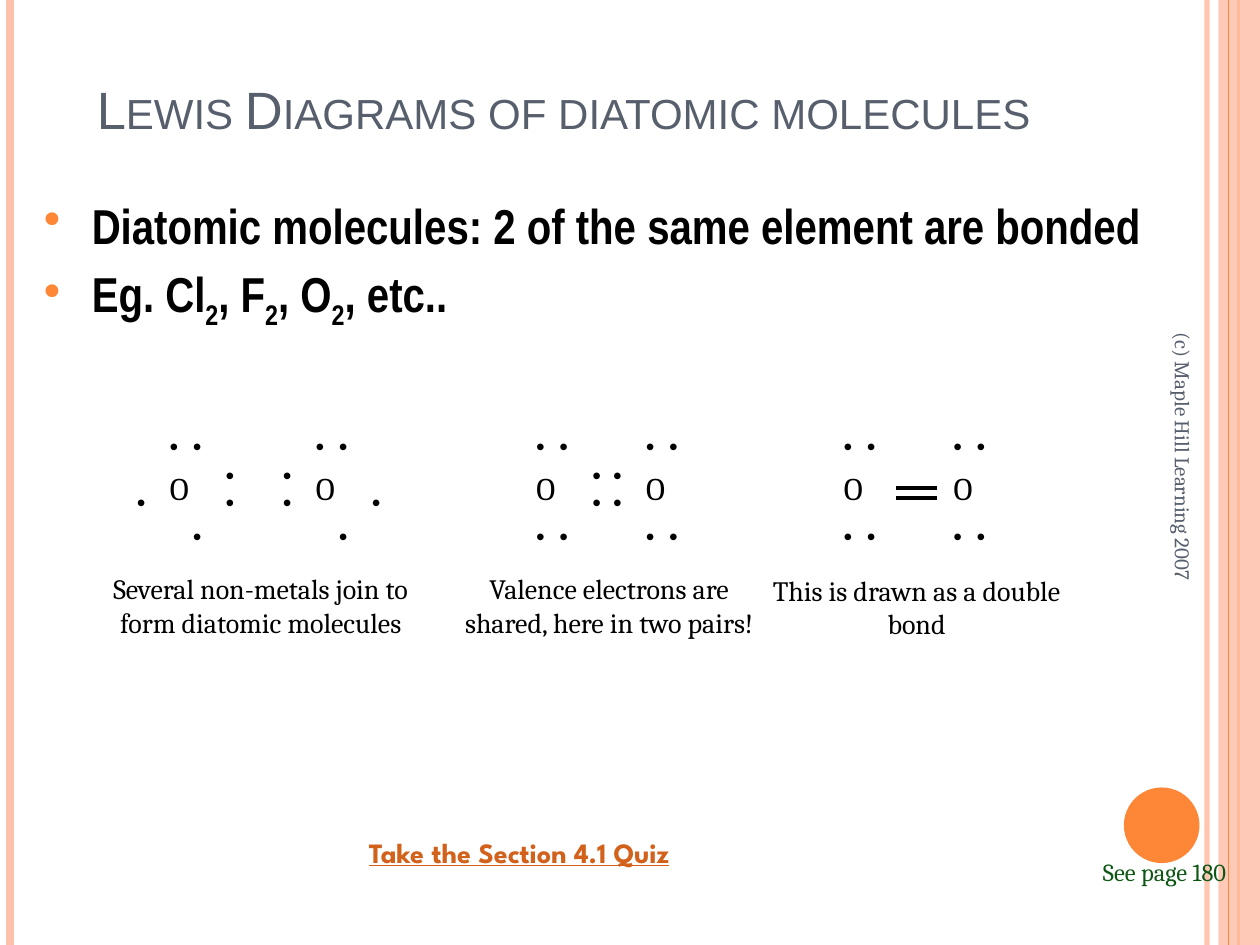
import pptx
import pptx.util
import pptx.dml.color
import pptx.enum.shapes
import pptx.enum.text
import pptx.oxml.ns
import lxml.etree

deck = pptx.Presentation()
deck.slide_width = pptx.util.Inches(10)
deck.slide_height = pptx.util.Inches(7.5)
page = deck.slides.add_slide(deck.slide_layouts[6])

# Grid of square cells: 100 columns by 75 rows
COLUMNS, ROWS = 100, 75
CELL = deck.slide_width / COLUMNS
ALIGN = pptx.enum.text.PP_ALIGN
ANCHOR = pptx.enum.text.MSO_ANCHOR
SHAPES = pptx.enum.shapes.MSO_SHAPE
ORANGE, PEACH, SLATE, BLACK = "FE8637", "FEC2AC", "575F6D", "000000"


def grid(*cells):
    return [round(cell * CELL) for cell in cells]


def color(hex_value):
    return pptx.dml.color.RGBColor.from_string(hex_value)


def child(parent, tag, **attributes):
    return lxml.etree.SubElement(parent, pptx.oxml.ns.qn(tag), attributes)


def set_alpha(fill_owner, percent):
    for fill in fill_owner.iter(pptx.oxml.ns.qn("a:srgbClr")):
        child(fill, "a:alpha", val=str(percent * 1000))


def add_line(start, end, hex_value, width, alpha=100):
    line = page.shapes.add_connector(
        pptx.enum.shapes.MSO_CONNECTOR.STRAIGHT, *grid(*start, *end))
    line.line.color.rgb = color(hex_value)
    line.line.width = pptx.util.Pt(width)
    properties = line._element.spPr
    if alpha < 100:
        set_alpha(properties, alpha)
    child(properties, "a:effectLst")


def add_solid(kind, box, hex_value):
    shape = page.shapes.add_shape(kind, *grid(*box))
    shape.shadow.inherit = False
    shape.fill.solid()
    shape.fill.fore_color.rgb = color(hex_value)
    shape.line.fill.background()
    return shape


def add_frame(box, anchor=ANCHOR.TOP):
    shape = page.shapes.add_textbox(*grid(*box))
    shape.text_frame.word_wrap = True
    shape.text_frame.vertical_anchor = anchor
    return shape


def add_span(para, text, size, font="Cambria", hex_value=BLACK, bold=False):
    span = para.add_run()
    span.text = text
    span.font.size = pptx.util.Pt(size)
    span.font.name = font
    span.font.bold = bold
    span.font.color.rgb = color(hex_value)
    return span


def add_label(box, text, size, align=ALIGN.LEFT, anchor=ANCHOR.TOP, **style):
    shape = add_frame(box, anchor)
    para = shape.text_frame.paragraphs[0]
    para.alignment = align
    return shape, add_span(para, text, size, **style)


def draw_backdrop(left, top, width, height):
    bottom = top + height
    for x, hex_value, weight, alpha in [
            (95.8, PEACH, 3, 93), (0.8, PEACH, 4.5, 100), (98.3, ORANGE, 1.5, 100)]:
        add_line((left + x, top), (left + x, bottom), hex_value, weight, alpha)
    band = add_solid(SHAPES.RECTANGLE, (left + 96.7, top, width - 96.7, height), PEACH)
    set_alpha(band._element.spPr, 87)
    add_line((left + 97.5, top), (left + 97.5, bottom), ORANGE, 0.75)
    add_solid(SHAPES.OVAL, (left + 89.2, top + 62.5, 6, 6), ORANGE)


def draw_bullets(box, items):
    """Each item alternates plain text and subscript."""
    frame = add_frame(box).text_frame
    for number, item in enumerate(items):
        para = frame.add_paragraph() if number else frame.paragraphs[0]
        para.space_before = pptx.util.Pt(5.6 if number else 0)
        properties = para._p.get_or_add_pPr()
        indent = grid(3.8)[0]
        properties.set("marL", str(indent))
        properties.set("indent", str(-indent))
        child(child(properties, "a:buClr"), "a:srgbClr", val=ORANGE)
        child(properties, "a:buChar", char="•")
        for part, text in enumerate(item):
            span = add_span(para, text, 28, "Arial Narrow", bold=True)
            if part % 2:
                span.font._element.set("baseline", "-25000")


# Electron columns inside an atom's box
FAR_LEFT, LEFT, RIGHT, FAR_RIGHT = 2, 4.6, 6.45, 9.05
PAIR = (LEFT, RIGHT)
SIDE_PITCH = 15.4  # points from one side row to the next


def draw_atom(box, rows):
    """Rows list the electron columns: top, upper side, lower side, bottom."""
    left, top, width, height = box
    frame = add_frame(box).text_frame
    frame.margin_left = frame.margin_right = 0
    skipped = 0
    for number, columns in enumerate(rows):
        if not columns:
            skipped += SIDE_PITCH
            continue
        para = frame.add_paragraph() if number else frame.paragraphs[0]
        para.line_spacing = 0.5 if number in (1, 2) else 0.8
        para.space_before = pptx.util.Pt(7 + skipped if number else 0)
        skipped = 0
        stops = child(para._p.get_or_add_pPr(), "a:tabLst")
        for column in columns:
            child(stops, "a:tab", pos=str(grid(column)[0]), algn="ctr")
            add_span(para, "\t•", 14, "Courier New")
    add_label((left + 3.3, top + 2.5, 6.7, 5), "O", 18)


def draw_molecule(box, spacing, atoms, caption, caption_box):
    left, top, width, height = box
    for number, rows in enumerate(atoms):
        draw_atom((left + number * spacing, top, width, height), rows)
    add_label(caption_box, caption, 16, ALIGN.CENTER)


def draw_double_bond(left, top, width, gap):
    for y in (top, top + gap):
        add_line((left, y), (left + width, y), BLACK, 2.25)


# Background, title and side notes
draw_backdrop(0, 0, COLUMNS, ROWS)
title_span = add_label((6.7, 3.3, 80, 8.3), "Lewis Diagrams of diatomic molecules", 30,
                       anchor=ANCHOR.BOTTOM, font="Arial", hex_value=SLATE)[1]
title_span.font._element.set("cap", "small")
credit = add_label((76.4, 40.9, 35, 4), "(c) Maple Hill Learning 2007", 12,
                   anchor=ANCHOR.MIDDLE, hex_value=SLATE)[0]
credit.rotation = 90
add_label((79.4, 67.5, 18.9, 3.3), "See page 180", 14, ALIGN.RIGHT, hex_value="0D5613")

# Main points
draw_bullets((2.5, 15, 97.5, 11.7), [
    ["Diatomic molecules: 2 of the same element are bonded"],
    ["Eg. Cl", "2", ", F", "2", ", O", "2", ", etc.."]])

# Oxygen: separate atoms, shared pairs, double bond
draw_molecule((9.2, 34.2, 11.1, 10.5), 11.6,
              [(PAIR, (FAR_RIGHT,), (FAR_LEFT, FAR_RIGHT), (RIGHT,)),
               (PAIR, (FAR_LEFT,), (FAR_LEFT, FAR_RIGHT), (RIGHT,))],
              "Several non-metals join to form diatomic molecules", (6.7, 44.9, 28, 6.4))
draw_molecule((38.3, 34.2, 11.1, 10.5), 8.7,
              [(PAIR, (FAR_RIGHT,), (FAR_RIGHT,), PAIR),
               (PAIR, (FAR_LEFT,), (FAR_LEFT,), PAIR)],
              "Valence electrons are shared, here in two pairs!", (35.7, 44.9, 25.3, 9))
draw_molecule((62.7, 34.2, 11.1, 10.5), 8.7, [(PAIR, (), (), PAIR)] * 2,
              "This is drawn as a double bond", (60.1, 45, 25.3, 6.4))
draw_double_bond(71.1, 38.7, 3.3, 0.8)

# Quiz prompt
quiz_span = add_label((28.3, 65.8, 33.3, 3.7), "Take the Section 4.1 Quiz", 16,
                      font="League Spartan", hex_value="D2611C", bold=True)[1]
quiz_span.font.underline = True

deck.save("out.pptx")
